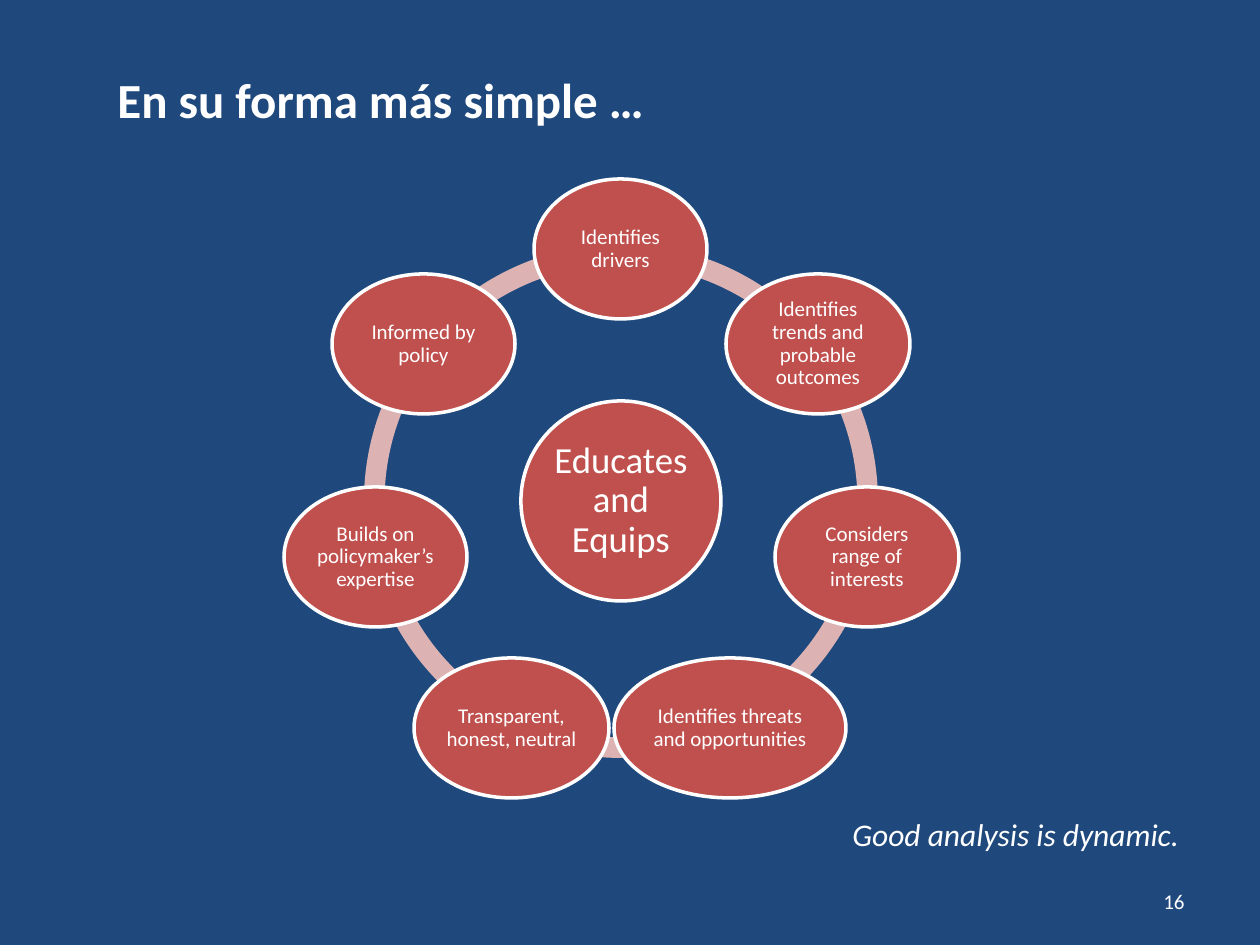
"""Build a slide with seven analysis qualities placed on a ring around a core."""
from math import cos, radians, sin

from pptx import Presentation
from pptx.dml.color import RGBColor
from pptx.enum.shapes import MSO_SHAPE as Shape
from pptx.enum.text import MSO_ANCHOR as Anchor, PP_ALIGN as Align
from pptx.util import Emu, Pt

PX = 914400 // 126
FONT = "Calibri"
COLORS = {"back": "1F497D", "node": "C0504D", "ring": "DCB3B2", "white": "FFFFFF"}

TITLE = "En su forma más simple …"
CORE = "Educates and Equips"
NODES = [
    ("Identifies drivers", 173),
    ("Identifies trends and probable outcomes", 184),
    ("Considers range of interests", 184),
    ("Identifies threats and opportunities", 232),
    ("Transparent, honest, neutral", 195),
    ("Builds on policymaker’s expertise", 183),
    ("Informed by policy", 183),
]
CLOSING = "Good analysis is dynamic."
PAGE_NUMBER = "16"

CENTER_X, CENTER_Y = 621, 501
ORBIT = 252
RING_SIZE = 514
RING_THICKNESS = 0.04
CORE_SIZE = 200
NODE_HEIGHT = 140
INSET = 2
STEP = 360 / len(NODES)
ADJUST_PER_DEGREE = 0.6


def px(*lengths):
    return [Emu(length * PX) for length in lengths]


def color(name):
    return RGBColor.from_string(COLORS[name])


def write(shape, text, size, align=Align.LEFT, anchor=Anchor.TOP, wrap=True):
    frame = shape.text_frame
    frame.word_wrap = wrap
    frame.vertical_anchor = anchor
    frame.text = text
    para = frame.paragraphs[0]
    para.alignment = align
    font = para.runs[0].font
    font.name, font.size = FONT, Pt(size)
    font.color.rgb = color("white")
    return font


def add_text(page, place, text, size, **layout):
    box = page.shapes.add_textbox(*px(*place))
    return write(box, text, size, **layout)


def add_centered(page, kind, x, y, width, height, fill):
    left, top = round(x - width / 2), round(y - height / 2)
    shape = page.shapes.add_shape(kind, *px(left, top, width, height))
    shape.shadow.inherit = False
    shape.fill.solid()
    shape.fill.fore_color.rgb = color(fill)
    return shape


def add_arc(page, start):
    arc = add_centered(page, Shape.BLOCK_ARC, CENTER_X, CENTER_Y, RING_SIZE, RING_SIZE, "ring")
    arc.line.fill.background()
    arc.adjustments[0] = start % 360 * ADJUST_PER_DEGREE
    arc.adjustments[1] = (start + STEP) % 360 * ADJUST_PER_DEGREE
    arc.adjustments[2] = RING_THICKNESS


def add_bubble(page, x, y, width, height, text, size):
    bubble = add_centered(page, Shape.OVAL, x, y, width, height, "node")
    bubble.line.color.rgb = color("white")
    bubble.line.width = Pt(2)
    write(bubble, text, size, Align.CENTER, Anchor.MIDDLE)
    frame = bubble.text_frame
    frame.margin_left, frame.margin_top, frame.margin_right, frame.margin_bottom = px(*[INSET] * 4)
    frame.paragraphs[0].line_spacing = 0.9


def main():
    deck = Presentation()
    deck.slide_width, deck.slide_height = px(1260, 945)
    page = deck.slides.add_slide(deck.slide_layouts[6])
    page.background.fill.solid()
    page.background.fill.fore_color.rgb = color("back")

    add_text(page, (105, 63, 1018, 72), TITLE, 28).bold = True

    for index in range(len(NODES)):
        add_arc(page, 270 + index * STEP)
    add_bubble(page, CENTER_X, CENTER_Y, CORE_SIZE, CORE_SIZE, CORE, 21)
    for index, (text, width) in enumerate(NODES):
        angle = radians(index * STEP)
        x, y = CENTER_X + ORBIT * sin(angle), CENTER_Y - ORBIT * cos(angle)
        add_bubble(page, x, y, width, NODE_HEIGHT, text, 12)

    add_text(page, (840, 809, 355, 50), CLOSING, 18, wrap=False).italic = True
    add_text(page, (903, 876, 294, 50), PAGE_NUMBER, 12, align=Align.RIGHT, anchor=Anchor.MIDDLE)
    deck.save("out.pptx")


if __name__ == "__main__":
    main()
